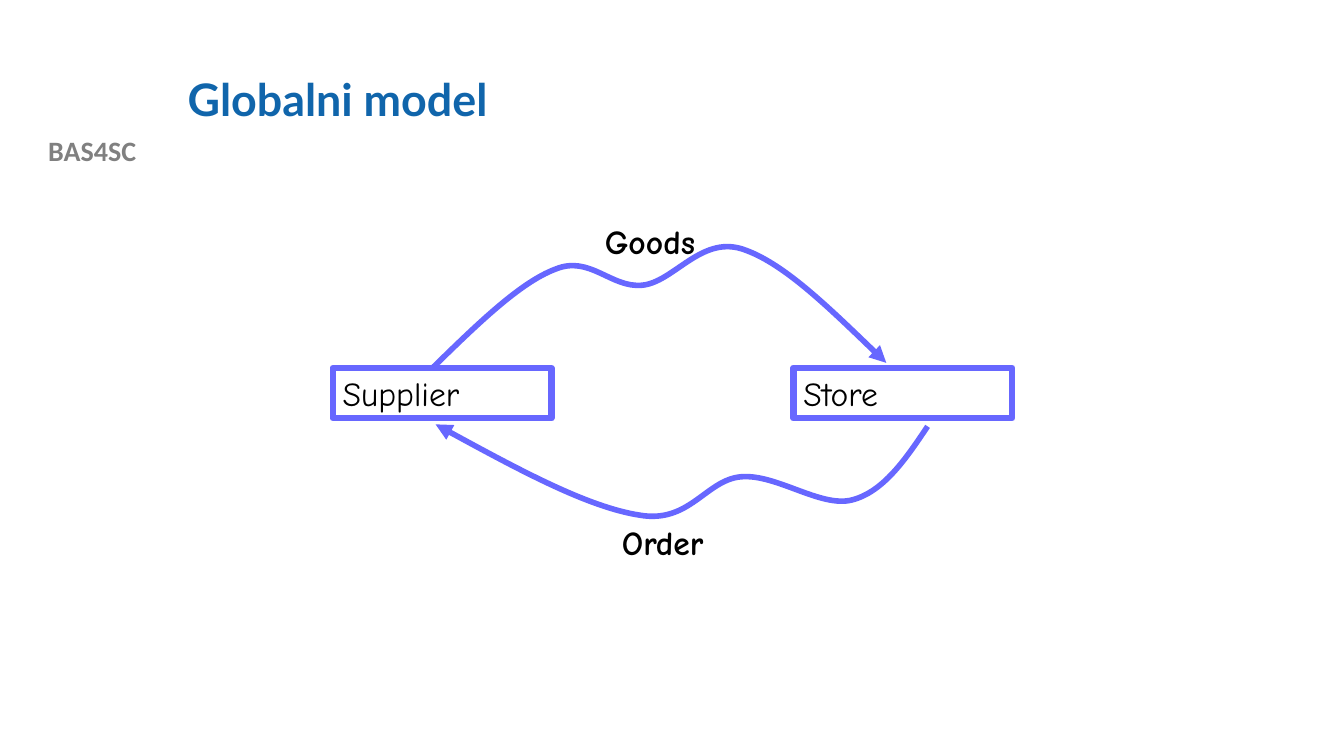
"""Build the supplier and store model slide."""
import pptx
import pptx.util
import pptx.enum.text
import pptx.enum.shapes
import pptx.dml.color
import pptx.oxml
import pptx.oxml.ns

Inches = pptx.util.Inches
HUES = {"title": "1065AB", "tag": "808080", "line": "6767FF", "text": "000000"}
HAND = "Comic Neue"
TITLE = ("Globalni model", (1.76, 0.4, 10.66, 1.22))
TAG = ("BAS4SC", (0, 1.28, 1.83, 0.43))
BOXES = [("Supplier", 3.3), ("Store", 7.87)]
BOX_TOP, BOX_W, BOX_H = 3.65, 2.17, 0.5
LABELS = [("Goods", (5.9, 2.14, 1.15, 0.51)), ("Order", (6.07, 5.13, 1.18, 0.51))]
CURVES = [
    [(4.3, 3.64),
     (4.73, 3.22), (5.16, 2.8), (5.51, 2.67),
     (5.85, 2.53), (6.06, 2.86), (6.37, 2.83),
     (6.68, 2.8), (6.95, 2.34), (7.36, 2.47),
     (7.76, 2.6), (8.27, 3.1), (8.79, 3.6)],
    [(9.2, 4.23),
     (8.98, 4.56), (8.76, 4.88), (8.45, 4.96),
     (8.14, 5.04), (7.7, 4.7), (7.35, 4.73),
     (7, 4.76), (6.84, 5.2), (6.34, 5.11),
     (5.83, 5.03), (5.07, 4.62), (4.32, 4.21)],
]


def color(name):
    return pptx.dml.color.RGBColor.from_string(HUES[name])


def write(shape, text, font, size, hue, bold=False, align="LEFT", anchor="TOP"):
    """Put one styled paragraph in a shape."""
    frame = shape.text_frame
    frame.text = text
    frame.word_wrap = True
    frame.auto_size = pptx.enum.text.MSO_AUTO_SIZE.NONE
    frame.vertical_anchor = getattr(pptx.enum.text.MSO_ANCHOR, anchor)
    para = frame.paragraphs[0]
    para.alignment = getattr(pptx.enum.text.PP_ALIGN, align)
    style = para.runs[0].font
    style.name, style.size, style.bold = font, pptx.util.Pt(size), bold
    style.color.rgb = color(hue)
    return para


def outline(shape, width):
    """Give a shape a plain line and no fill."""
    shape.shadow.inherit = False
    shape.fill.background()
    shape.line.color.rgb = color("line")
    shape.line.width = pptx.util.Pt(width)


def draw_curve(shapes, points):
    """Draw a smooth arrow from a start point and Bezier triples."""
    spots = [(Inches(x), Inches(y)) for x, y in points]
    form = shapes.build_freeform(*spots[0], scale=1.0)
    form.add_line_segments(spots[1:], close=False)
    curve = form.convert_to_shape()
    outline(curve, 4)
    qn = pptx.oxml.ns.qn
    track = curve.element.find(".//" + qn("a:path"))
    steps = track.findall(qn("a:lnTo"))
    for i in range(0, len(steps), 3):
        bend = pptx.oxml.ns.nsdecls("a")
        bend = pptx.oxml.parse_xml(f"<a:cubicBezTo {bend}/>")
        for step in steps[i:i + 3]:
            bend.append(step[0])
            track.remove(step)
        track.append(bend)
    tip = pptx.oxml.parse_xml(
        f'<a:tailEnd {pptx.oxml.ns.nsdecls("a")} type="triangle"/>')
    curve.line._get_or_add_ln().append(tip)


def main():
    deck = pptx.Presentation()
    deck.slide_width, deck.slide_height = Inches(13.33), Inches(7.5)
    slide = deck.slides.add_slide(deck.slide_layouts[5])
    shapes = slide.shapes

    text, place = TITLE
    title = shapes.title
    title.left, title.top, title.width, title.height = map(Inches, place)
    para = write(title, text, "Lato", 32, "title", True, anchor="MIDDLE")
    para.line_spacing = 0.9

    text, place = TAG
    tag = shapes.add_textbox(*map(Inches, place))
    write(tag, text, "Calibri", 20, "tag", True, "CENTER")

    for text, left in BOXES:
        place = map(Inches, (left, BOX_TOP, BOX_W, BOX_H))
        box = shapes.add_shape(pptx.enum.shapes.MSO_SHAPE.RECTANGLE, *place)
        outline(box, 4.5)
        write(box, text, HAND, 24, "text")

    for points in CURVES:
        draw_curve(shapes, points)

    for text, place in LABELS:
        label = shapes.add_textbox(*map(Inches, place))
        write(label, text, HAND, 24, "text", True)

    deck.save("out.pptx")


if __name__ == "__main__":
    main()
